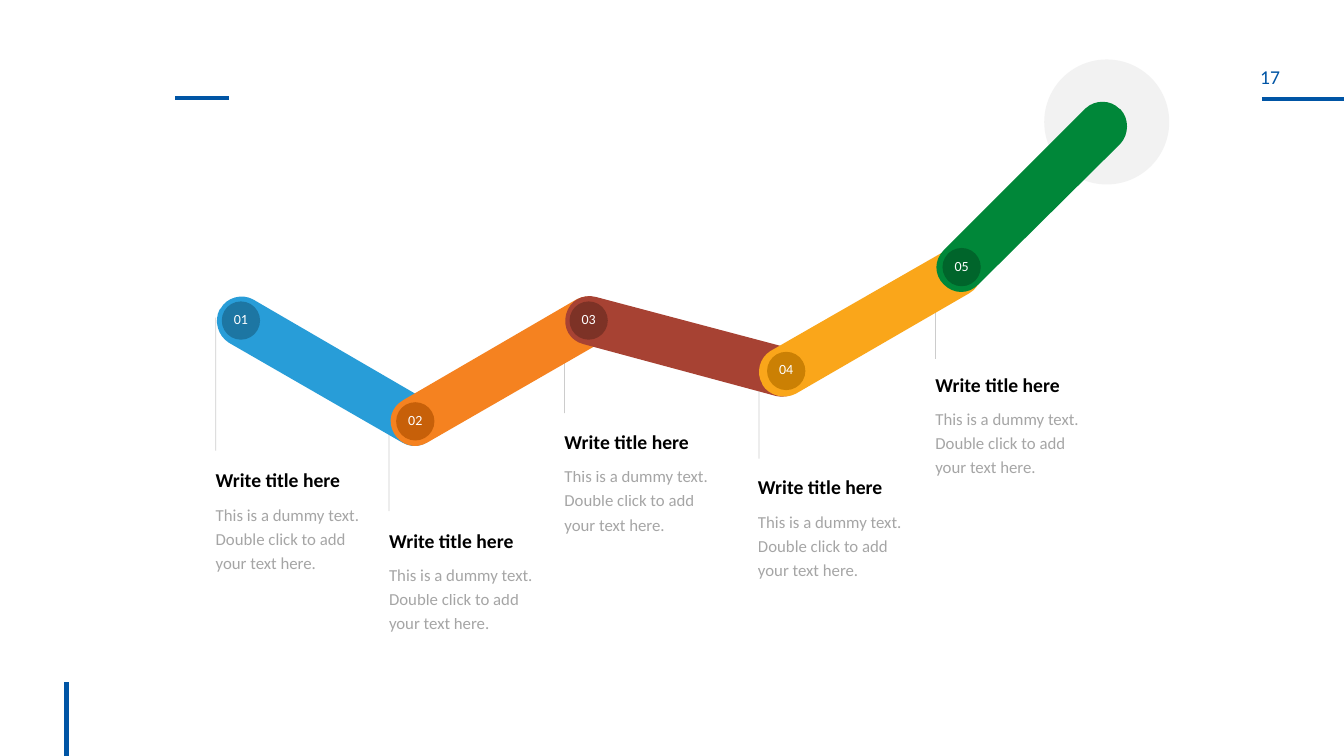
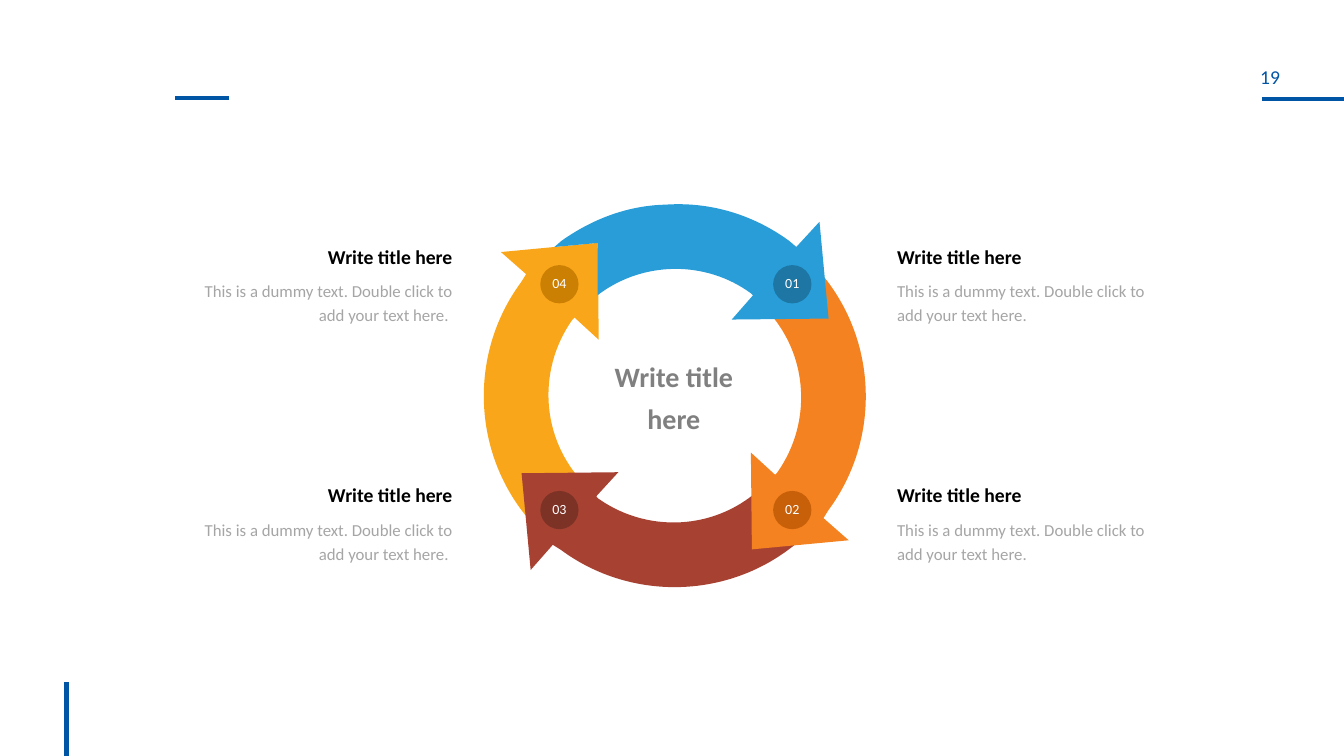
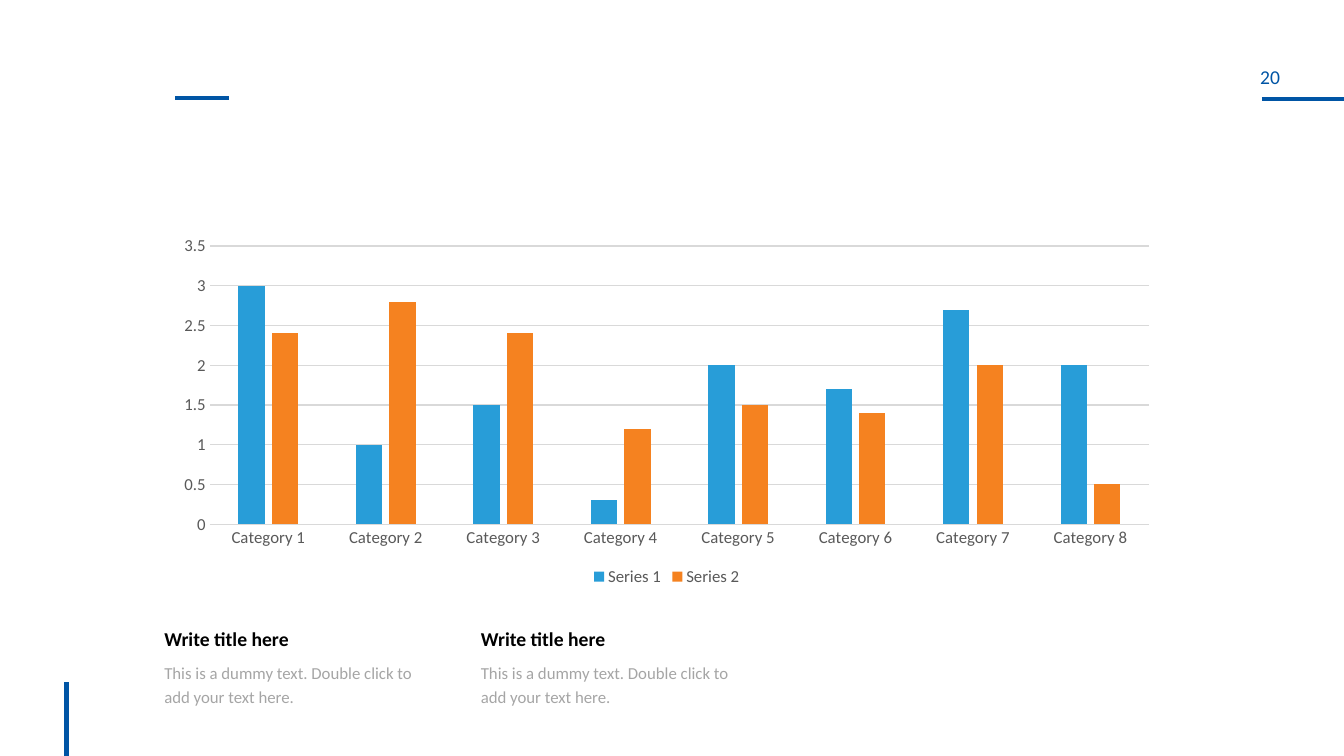
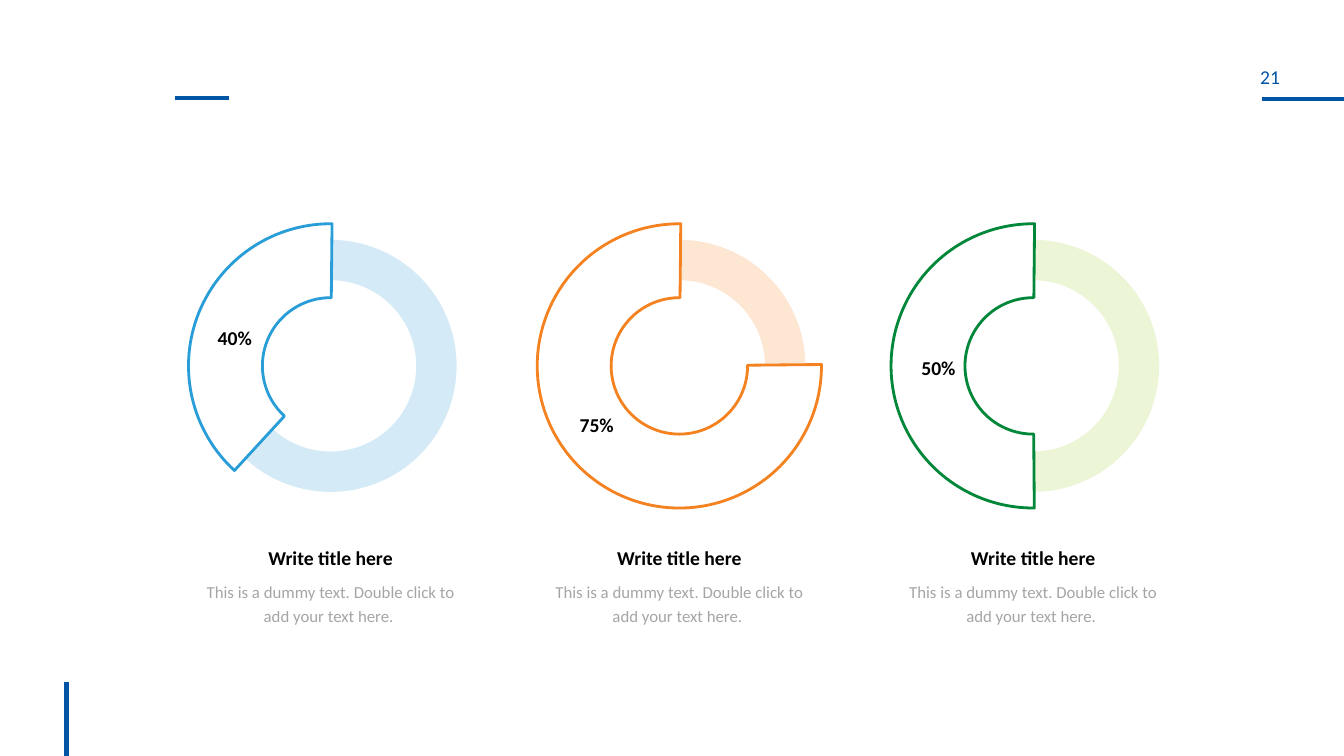
import math
from dataclasses import dataclass
from typing import Any, Optional

import lxml.etree
import pptx
import pptx.chart.data
import pptx.dml.color
import pptx.enum.chart
import pptx.enum.shapes
import pptx.enum.text
import pptx.oxml.ns
import pptx.util

Inches = pptx.util.Inches
Pt = pptx.util.Pt
RGBColor = pptx.dml.color.RGBColor
SHAPE = pptx.enum.shapes.MSO_SHAPE
ALIGN = pptx.enum.text.PP_ALIGN
ANCHOR = pptx.enum.text.MSO_ANCHOR
AUTO_SIZE = pptx.enum.text.MSO_AUTO_SIZE
qn = pptx.oxml.ns.qn

SLIDE_WIDTH = 40 / 3
FONT = "Calibri"
NAVY = RGBColor(0x00, 0x55, 0xA5)
BLACK = RGBColor(0x00, 0x00, 0x00)
WHITE = RGBColor(0xFF, 0xFF, 0xFF)
GRAY = RGBColor(0x80, 0x80, 0x80)
HALO = RGBColor(0xF2, 0xF2, 0xF2)
AXIS_TEXT = RGBColor(0x59, 0x59, 0x59)
GRID = RGBColor(0xD9, 0xD9, 0xD9)
BLUE = RGBColor(0x28, 0x9D, 0xD8)
ORANGE = RGBColor(0xF5, 0x82, 0x20)
RED = RGBColor(0xA7, 0x42, 0x33)
YELLOW = RGBColor(0xFA, 0xA6, 0x1A)
GREEN = RGBColor(0x00, 0x87, 0x39)
DARK_BLUE = RGBColor(0x1D, 0x76, 0xA3)
DARK_ORANGE = RGBColor(0xC7, 0x60, 0x09)
DARK_RED = RGBColor(0x7D, 0x32, 0x26)
DARK_YELLOW = RGBColor(0xCB, 0x80, 0x04)
DARK_GREEN = RGBColor(0x00, 0x65, 0x2B)
PALE_BLUE = RGBColor(0xD4, 0xEB, 0xF7)
PALE_ORANGE = RGBColor(0xFD, 0xE6, 0xD2)
PALE_GREEN = RGBColor(0xED, 0xF5, 0xD7)

TITLE = "Write title here"
BODY = "This is a dummy text. Double click to add your text here."

Point = tuple[float, float]
Outline = list[tuple[Point, ...]]


@dataclass(frozen=True)
class Frame:
    left: float
    top: float
    width: float
    height: float
    rotation: float = 0

    @property
    def center(self) -> Point:
        return self.left + self.width / 2, self.top + self.height / 2


@dataclass(frozen=True)
class Badge:
    label: str
    center: Point
    fill: RGBColor


@dataclass(frozen=True)
class Step:
    badge: Badge
    fill: RGBColor
    rod_at: Point
    rotation: float
    mirrored: bool
    tick_x: float
    tick_top: float
    tick_bottom: float
    text_at: Point


@dataclass(frozen=True)
class CycleArrow:
    frame: Frame
    fill: RGBColor
    outline: Outline
    turn: float = 0


@dataclass(frozen=True)
class Gauge:
    label: str
    center_x: float
    label_at: Point
    start: float
    color: RGBColor
    pale: RGBColor


STEPS = [
    Step(Badge("01", (2.39, 3.18), DARK_BLUE), BLUE, (2.12, 2.91), 0, False,
         2.14, 3.15, 4.47, (2.14, 4.55)),
    Step(Badge("02", (4.12, 4.18), DARK_ORANGE), ORANGE, (3.84, 2.91), 0, True,
         3.86, 4.11, 5.07, (3.86, 5.15)),
    Step(Badge("03", (5.84, 3.18), DARK_RED), RED, (5.67, 2.66), 45, True,
         5.6, 3.14, 4.1, (5.6, 4.17)),
    Step(Badge("04", (7.8, 3.68), DARK_YELLOW), YELLOW, (7.5, 2.42), 300, False,
         7.53, 3.6, 4.55, (7.52, 4.62)),
    Step(Badge("05", (9.54, 2.65), DARK_GREEN), GREEN, (9.1, 1.18), 345.2, True,
         9.28, 2.6, 3.56, (9.28, 3.6)),
]
ROD_WIDTH, ROD_HEIGHT = 2.27, 1.55
ROD: Outline = [
    ((0.39, 0.06),),
    ((2.11, 1.06),),
    ((2.23, 1.13), (2.27, 1.27), (2.2, 1.39)),
    ((2.2, 1.39),),
    ((2.13, 1.51), (1.99, 1.55), (1.87, 1.48)),
    ((0.15, 0.49),),
    ((0.04, 0.42), (0, 0.27), (0.06, 0.16)),
    ((0.07, 0.15),),
    ((0.13, 0.04), (0.28, 0), (0.39, 0.06)),
]

CYCLE_CENTER = (13.39 / 2, 3.93)
CYCLE_TILT = 312
ARROW: Outline = [
    ((5.93, 2.41),),
    ((5.94, 3.37),),
    ((5.7, 3.15),),
    ((5.68, 3.17),),
    ((5.31, 3.69), (5.37, 4.42), (5.86, 4.86)),
    ((5.86, 4.86), (5.86, 4.86), (5.43, 5.34)),
    ((4.69, 4.68), (4.6, 3.57), (5.17, 2.8)),
    ((5.22, 2.72),),
    ((4.97, 2.5),),
]
NOTCHED_ARROW: Outline = [
    ((6.6, 2.03),),
    ((7.03, 2), (7.46, 2.12), (7.83, 2.39)),
    ((7.9, 2.45),),
    ((8.13, 2.2),),
    ((8.22, 3.16),),
    ((7.26, 3.17),),
    ((7.47, 2.93),),
    ((7.45, 2.91),),
    ((7, 2.58), (6.38, 2.59), (5.94, 2.92)),
    ((5.93, 2.93),),
    ((5.93, 2.41),),
    ((5.5, 2.45),),
    ((5.57, 2.39),),
    ((5.88, 2.17), (6.23, 2.04), (6.6, 2.03)),
]
CYCLE_ARROWS = [
    CycleArrow(Frame(4.18, 2.54, 2.51, 2.24, CYCLE_TILT), YELLOW, ARROW),
    CycleArrow(Frame(5.31, 3.94, 2.24, 2.51, CYCLE_TILT), RED, ARROW, 270),
    CycleArrow(Frame(6.69, 3.08, 2.51, 2.24, CYCLE_TILT), ORANGE, ARROW, 180),
    CycleArrow(Frame(6.05, 1.34, 2.01, 2.49, CYCLE_TILT), BLUE, NOTCHED_ARROW),
]
CYCLE_BADGES = [
    Badge("01", (7.86, 2.82), DARK_BLUE),
    Badge("02", (7.86, 5.06), DARK_ORANGE),
    Badge("04", (5.55, 2.82), DARK_YELLOW),
    Badge("03", (5.55, 5.06), DARK_RED),
]

GAUGES = [
    Gauge("40%", 3.28, (2.12, 3.18), 79.56, BLUE, PALE_BLUE),
    Gauge("75%", 6.74, (5.71, 4.05), 215.66, ORANGE, PALE_ORANGE),
    Gauge("50%", 10.25, (9.1, 3.48), 53.73, GREEN, PALE_GREEN),
]
GAUGE_Y = 3.63

CATEGORIES = [f"Category {n}" for n in range(1, 9)]
SERIES = [
    ("Series 1", (3, 1, 1.5, 0.3, 2, 1.7, 2.7, 2), BLUE),
    ("Series 2", (2.4, 2.8, 2.4, 1.2, 1.5, 1.4, 2, 0.5), ORANGE),
]


def set_alpha(element: Any, percent: int) -> None:
    clr = next(element.iter(qn("a:srgbClr")))
    lxml.etree.SubElement(clr, qn("a:alpha")).set("val", str(percent * 1000))


def set_font(font: Any, size: float, color: RGBColor, bold: bool = False) -> None:
    font.name = FONT
    font.size = Pt(size)
    font.bold = bold
    font.color.rgb = color


def add_line(s: Any, start: Point, end: Point, color: RGBColor, width: float,
             alpha: Optional[int] = None) -> None:
    cx = s.shapes.add_connector(
        pptx.enum.shapes.MSO_CONNECTOR.STRAIGHT,
        Inches(start[0]), Inches(start[1]), Inches(end[0]), Inches(end[1]),
    )
    cx.line.color.rgb = color
    cx.line.width = Pt(width)
    sp_pr = cx._element.spPr
    if alpha is not None:
        set_alpha(sp_pr, alpha)
    lxml.etree.SubElement(sp_pr, qn("a:effectLst"))


def paint(sp: Any, fill: RGBColor, outline: Optional[RGBColor] = None) -> None:
    sp.shadow.inherit = False
    sp.fill.solid()
    sp.fill.fore_color.rgb = fill
    if outline is None:
        sp.line.fill.background()
    else:
        sp.line.color.rgb = outline
        sp.line.width = Pt(2)


def add_centered(s: Any, kind: Any, center: Point, size: float, fill: RGBColor,
                 outline: Optional[RGBColor] = None) -> Any:
    sp = s.shapes.add_shape(
        kind, Inches(center[0] - size / 2), Inches(center[1] - size / 2),
        Inches(size), Inches(size),
    )
    paint(sp, fill, outline)
    return sp


def add_curved_shape(s: Any, frame: Frame, outline: Outline, fill: RGBColor) -> None:
    left, top = Inches(frame.left), Inches(frame.top)
    right, bottom = left + Inches(frame.width), top + Inches(frame.height)
    builder = s.shapes.build_freeform(left, top)
    builder.add_line_segments([(right, top), (right, bottom), (left, bottom)])
    sp = builder.convert_to_shape()
    paint(sp, fill)
    curve = next(sp._element.iter(qn("a:path")))
    for child in list(curve):
        curve.remove(child)
    for i, points in enumerate(outline):
        name = "a:moveTo" if i == 0 else "a:lnTo" if len(points) == 1 else "a:cubicBezTo"
        command = lxml.etree.SubElement(curve, qn(name))
        for x, y in points:
            pt = lxml.etree.SubElement(command, qn("a:pt"))
            pt.set("x", str(Inches(x)))
            pt.set("y", str(Inches(y)))
    lxml.etree.SubElement(curve, qn("a:close"))
    sp.rotation = frame.rotation


def set_insets(tf: Any, side: float, edge: float) -> None:
    tf.margin_left = tf.margin_right = Inches(side)
    tf.margin_top = tf.margin_bottom = Inches(edge)


def add_text(s: Any, at: Point, width: float, height: float, lines: list[str],
             align: Any = ALIGN.LEFT, wrap: bool = True,
             insets: Point = (0, 0.05)) -> Any:
    tb = s.shapes.add_textbox(Inches(at[0]), Inches(at[1]), Inches(width), Inches(height))
    tf = tb.text_frame
    tf.word_wrap = wrap
    tf.auto_size = AUTO_SIZE.SHAPE_TO_FIT_TEXT
    set_insets(tf, *insets)
    tf.text = "\n".join(lines)
    for i, p in enumerate(tf.paragraphs):
        p.alignment = align
        if i:
            p.space_before = Pt(6)
    return tf


def add_caption(s: Any, at: Point, width: float, height: float,
                align: Any = ALIGN.LEFT) -> None:
    text = BODY if align == ALIGN.LEFT else BODY + " "
    tf = add_text(s, at, width, height, [TITLE, text], align)
    title, body = tf.paragraphs
    title.line_spacing = body.line_spacing = 1.2
    set_font(title.runs[0].font, 14, BLACK, True)
    r = body.runs[0]
    set_font(r.font, 12, GRAY)
    set_alpha(r._r, 70)


def add_badge(s: Any, badge: Badge) -> None:
    sp = add_centered(s, SHAPE.OVAL, badge.center, 0.38, badge.fill)
    tf = sp.text_frame
    set_insets(tf, 0, 0)
    tf.vertical_anchor = ANCHOR.MIDDLE
    tf.text = badge.label
    p = tf.paragraphs[0]
    p.alignment = ALIGN.CENTER
    p.line_spacing = 0.8
    set_font(p.runs[0].font, 10, WHITE)


def add_rod(s: Any, step: Step) -> None:
    outline = ROD
    if step.mirrored:
        outline = [tuple((ROD_WIDTH - x, y) for x, y in points) for points in ROD]
    frame = Frame(*step.rod_at, ROD_WIDTH, ROD_HEIGHT, step.rotation)
    add_curved_shape(s, frame, outline, step.fill)


def turned(point: Point, center: Point, degrees: float) -> Point:
    cos, sin = math.cos(math.radians(degrees)), math.sin(math.radians(degrees))
    dx, dy = point[0] - center[0], point[1] - center[1]
    return center[0] + dx * cos - dy * sin, center[1] + dx * sin + dy * cos


def add_cycle_arrow(s: Any, arrow: CycleArrow) -> None:
    frame = arrow.frame

    def to_frame(point: Point) -> Point:
        placed = turned(point, CYCLE_CENTER, arrow.turn)
        x, y = turned(placed, frame.center, -frame.rotation)
        return x - frame.left, y - frame.top

    outline = [tuple(map(to_frame, points)) for points in arrow.outline]
    add_curved_shape(s, frame, outline, arrow.fill)


def add_base_slide(prs: Any, number: int) -> Any:
    s = prs.slides.add_slide(prs.slide_layouts[6])
    add_line(s, (12.52, 0.98), (SLIDE_WIDTH, 0.98), NAVY, 3)
    tf = add_text(s, (12, 0.64), 1.2, 0.33, [str(number)], ALIGN.CENTER, False, (0, 0))
    tf.auto_size = AUTO_SIZE.NONE
    set_font(tf.paragraphs[0].runs[0].font, 14, NAVY)
    add_line(s, (0.66, 6.77), (0.66, 7.5), NAVY, 3)
    add_line(s, (1.74, 0.97), (2.27, 0.97), NAVY, 3)
    return s


def build_path_slide(prs: Any) -> None:
    s = add_base_slide(prs, 17)
    for step in STEPS:
        add_line(s, (step.tick_x, step.tick_top), (step.tick_x, step.tick_bottom),
                 BLACK, 0.5, 20)
    add_centered(s, SHAPE.OVAL, (10.98, 1.21), 1.24, HALO)
    for step in STEPS:
        add_rod(s, step)
    for step in STEPS:
        add_badge(s, step.badge)
    for step in STEPS:
        add_caption(s, step.text_at, 1.47, 1.18)


def build_cycle_slide(prs: Any) -> None:
    s = add_base_slide(prs, 19)
    for left, align in ((8.9, ALIGN.LEFT), (1.89, ALIGN.RIGHT)):
        for top in (2.33, 4.7):
            add_caption(s, (left, top), 2.6, 0.94, align)
    for arrow in CYCLE_ARROWS:
        add_cycle_arrow(s, arrow)
    for badge in CYCLE_BADGES:
        add_badge(s, badge)
    tf = add_text(s, (5.99, 3.52), 1.39, 0.86, ["Write title", "here"],
                  ALIGN.CENTER, False, (0.1, 0.05))
    for p in tf.paragraphs:
        set_font(p.runs[0].font, 20, GRAY, True)


def build_chart_slide(prs: Any) -> None:
    s = add_base_slide(prs, 20)
    for left in (1.63, 4.77):
        add_caption(s, (left, 6.12), 2.6, 0.94)
    data = pptx.chart.data.CategoryChartData()
    data.categories = CATEGORIES
    for name, values, _ in SERIES:
        data.add_series(name, values)
    chart = s.shapes.add_chart(
        pptx.enum.chart.XL_CHART_TYPE.COLUMN_CLUSTERED,
        Inches(1.63), Inches(2.27), Inches(9.97), Inches(3.59), data,
    ).chart
    set_font(chart.font, 10, BLACK)
    chart.has_title = False
    chart.has_legend = True
    chart.legend.position = pptx.enum.chart.XL_LEGEND_POSITION.BOTTOM
    chart.legend.include_in_layout = False
    set_font(chart.legend.font, 12, AXIS_TEXT)
    for axis in (chart.category_axis, chart.value_axis):
        axis.major_tick_mark = axis.minor_tick_mark = pptx.enum.chart.XL_TICK_MARK.NONE
        set_font(axis.tick_labels.font, 12, AXIS_TEXT)
    chart.value_axis.format.line.fill.background()
    chart.value_axis.has_major_gridlines = True
    for line in (chart.category_axis.format.line,
                 chart.value_axis.major_gridlines.format.line):
        line.color.rgb = GRID
        line.width = Pt(0.75)
    plot = chart.plots[0]
    plot.vary_by_categories = False
    plot.gap_width = 219
    plot.overlap = -27
    for series, (_, _, color) in zip(plot.series, SERIES):
        series.format.fill.solid()
        series.format.fill.fore_color.rgb = color


def build_gauge_slide(prs: Any) -> None:
    s = add_base_slide(prs, 21)
    for gauge in GAUGES:
        center = (gauge.center_x, GAUGE_Y)
        ring = add_centered(s, SHAPE.DONUT, center, 2.5, gauge.pale)
        ring.adjustments[0] = 0.16
        band = add_centered(s, SHAPE.BLOCK_ARC, center, 2.82, WHITE, gauge.color)
        for i, value in enumerate((gauge.start, 162.34, 0.26)):
            band.adjustments[i] = value
        tf = add_text(s, gauge.label_at, 0.38, 0.34, [gauge.label], ALIGN.RIGHT, False)
        set_font(tf.paragraphs[0].runs[0].font, 14, BLACK, True)
        add_caption(s, (gauge.center_x - 1.25, 5.32), 2.5, 0.94, ALIGN.CENTER)


def main() -> None:
    prs = pptx.Presentation()
    prs.slide_width = Inches(SLIDE_WIDTH)
    prs.slide_height = Inches(7.5)
    build_path_slide(prs)
    build_cycle_slide(prs)
    build_chart_slide(prs)
    build_gauge_slide(prs)
    prs.save("out.pptx")


if __name__ == "__main__":
    main()
